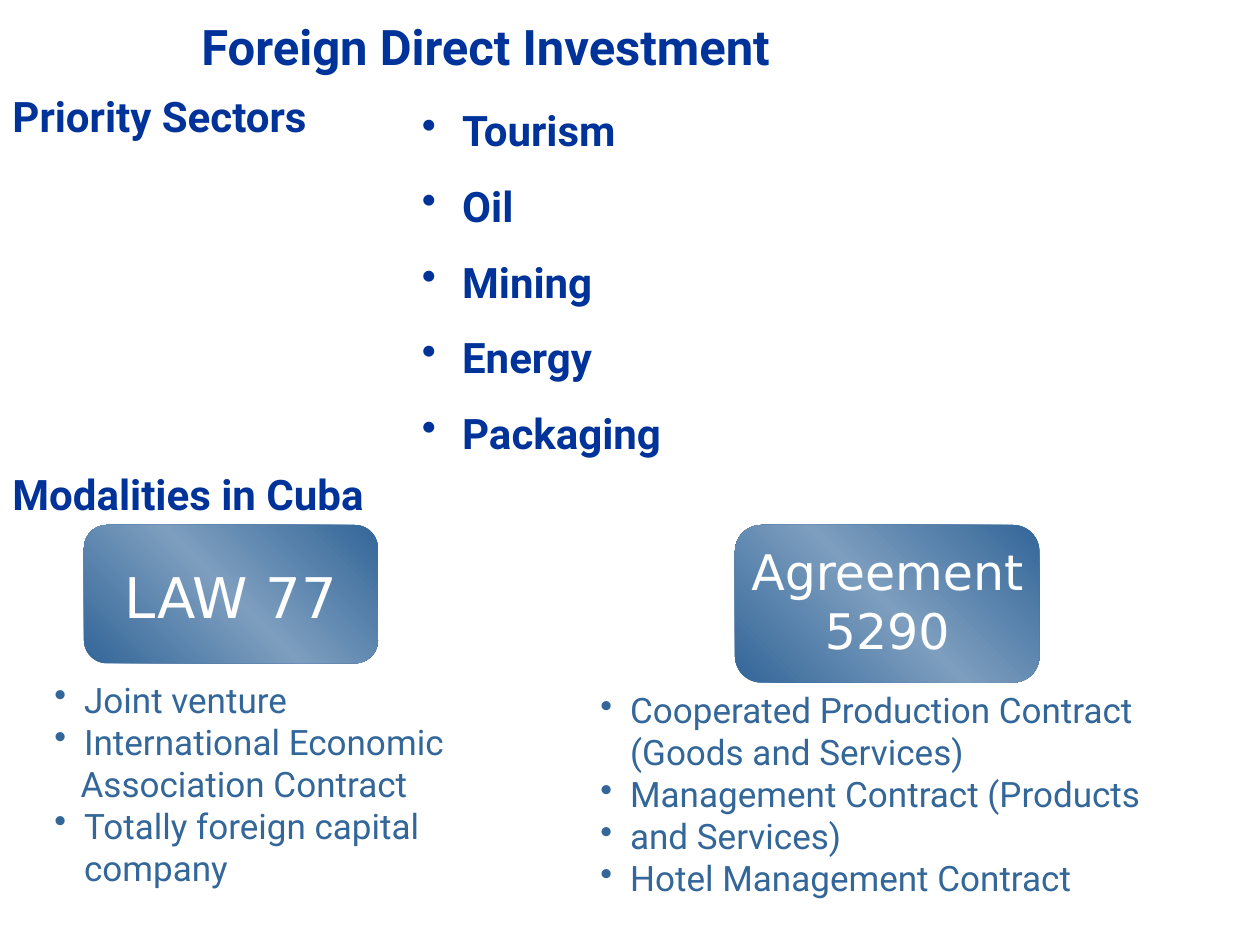
from copy import deepcopy
from pptx import Presentation
from pptx.dml.color import RGBColor
from pptx.enum import shapes, text
from pptx.oxml import ns, xmlchemy
from pptx.util import Pt

COLORS = {"navy": "003399", "steel": "336699", "light": "7D9EBE", "white": "FFFFFF"}

prs = Presentation()
prs.slide_width, prs.slide_height = Pt(720), Pt(540)
slide = prs.slides.add_slide(prs.slide_layouts[6])


def add_text(lines, box, size, color, font="Roboto", bold=False, wrap=True,
             align=text.PP_ALIGN.LEFT, spacing=1.0, indent=0, plain=()):
    s = slide.shapes.add_textbox(*map(Pt, box))
    tf = s.text_frame
    tf.word_wrap = wrap
    for i, line in enumerate(lines):
        p = tf.paragraphs[0] if i == 0 else tf.add_paragraph()
        if line in plain:
            p._p.get_or_add_pPr().set("marL", str(Pt(indent - 2)))
        elif indent:
            pPr = p._p.get_or_add_pPr()
            pPr.set("marL", str(Pt(indent)))
            pPr.set("indent", str(-Pt(indent)))
            bu = xmlchemy.OxmlElement("a:buChar")
            bu.set("char", "•")
            pPr.append(bu)
        p.text = line
        p.alignment = align
        p.line_spacing = spacing
        for r in p.runs:
            r.font.name, r.font.size, r.font.bold = font, Pt(size), bold
            r.font.color.rgb = RGBColor.from_string(COLORS[color])
    return s


panels = [
    ((48, 300, 168, 79), "LAW 77", (54, 318, 156, 46), 32,
     ["Joint venture", "International Economic", "Association Contract",
      "Totally foreign capital company"], (24, 384, 294, 128)),
    ((420, 300, 174, 90), "Agreement\v5290", (420, 306, 174, 75), 28,
     ["Cooperated Production Contract (Goods and Services)",
      "Management Contract (Products", "and Services)",
      "Hotel Management Contract"], (336, 390, 336, 133)),
]
for panel, name, name_box, size, items, list_box in panels:
    s = slide.shapes.add_shape(shapes.MSO_SHAPE.ROUNDED_RECTANGLE, *map(Pt, panel))
    s.shadow.inherit = False
    s.line.fill.background()
    s.fill.gradient()
    s.fill.gradient_angle = 45
    stops = s._element.spPr.find(ns.qn("a:gradFill")).find(ns.qn("a:gsLst"))
    stops.insert(1, deepcopy(stops[0]))
    for stop, pos, color in zip(s.fill.gradient_stops, (0, 0.5, 1), ("steel", "light", "steel")):
        stop.position = pos
        stop.color.rgb = RGBColor.from_string(COLORS[color])
    add_text([name], name_box, size, "white", font="DejaVu Sans",
             align=text.PP_ALIGN.CENTER)
    add_text(items, list_box, 20, "steel", indent=17, plain=("Association Contract",))

title = add_text(["Foreign Direct Investment"], (108, 6, 408, 41), 28, "navy", bold=True)
title.fill.solid()
title.fill.fore_color.rgb = RGBColor.from_string(COLORS["white"])

for heading, box in [("Priority Sectors", (0, 48, 203, 37)),
                     ("Modalities in Cuba", (0, 264, 238, 37))]:
    add_text([heading], box, 24, "navy", bold=True, wrap=False)

add_text(["Tourism", "Oil", "Mining", "Energy", "Packaging"], (234, 42, 156, 225),
         24, "navy", bold=True, spacing=1.5, indent=23)

prs.save("out.pptx")
